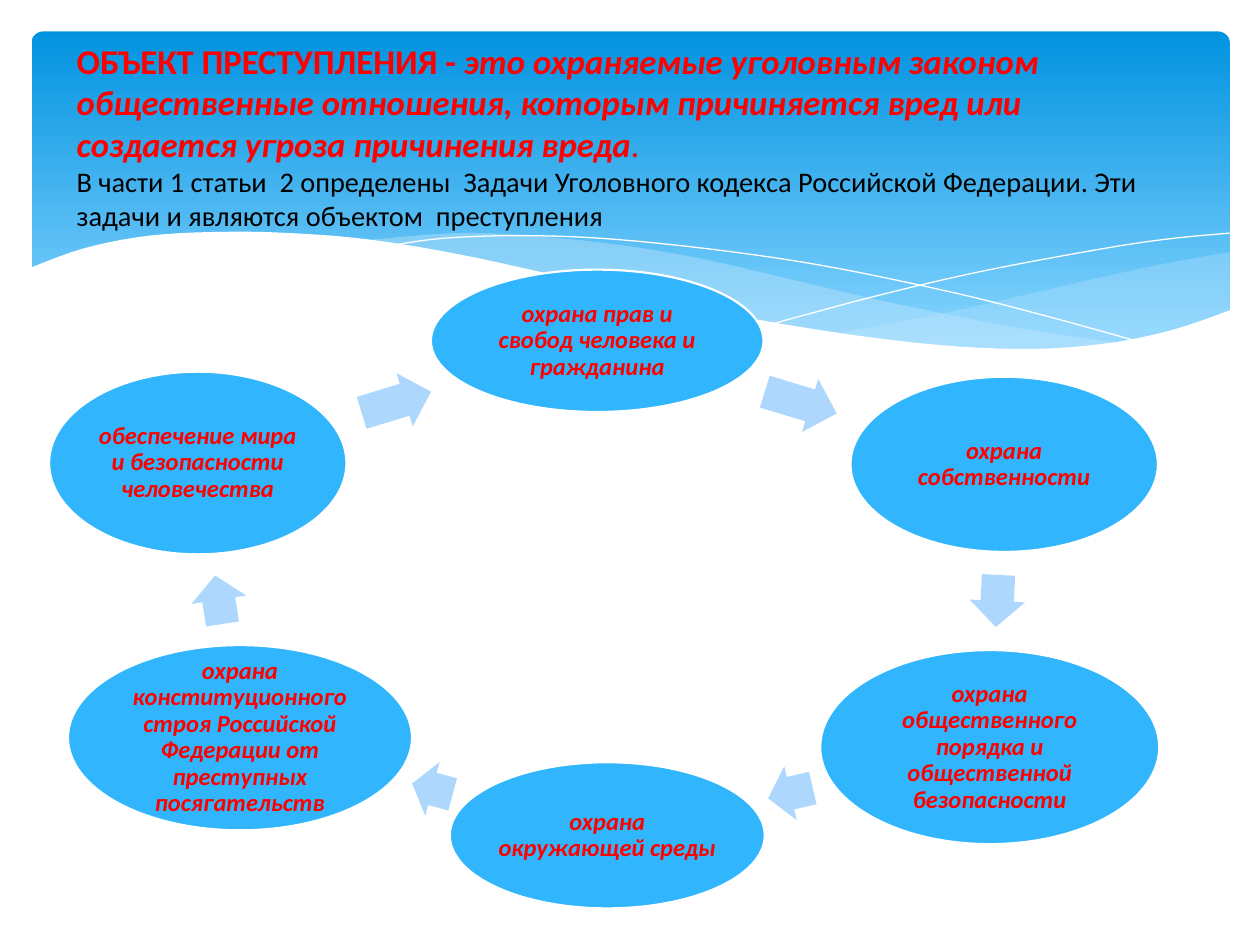
from dataclasses import dataclass
from math import atan2, cos, degrees, hypot, sin

from lxml.etree import SubElement
from pptx import Presentation
from pptx.dml.color import RGBColor
from pptx.enum.shapes import MSO_SHAPE
from pptx.enum.text import MSO_ANCHOR, PP_ALIGN
from pptx.oxml.ns import qn
from pptx.util import Inches, Pt


@dataclass(frozen=True)
class Theme:
    font: str = "Calibri"
    white: str = "FFFFFF"
    black: str = "000000"
    red: str = "FF0000"
    top: str = "0293E0"
    low: str = "83D3FE"
    haze: str = "C6E7FC"
    oval: str = "31B6FD"
    arrow: str = "AED7FE"
    head: float = 19.8
    sub: float = 16.2
    body: float = 14


THEME = Theme()

# Ovals clockwise from the top: left, top, width, height, text
DUTIES = [
    (3.42, 2.14, 2.64, 1.13, "охрана прав и свобод человека и гражданина"),
    (6.75, 2.99, 2.44, 1.39, "охрана собственности"),
    (6.51, 5.16, 2.69, 1.54,
     "охрана общественного порядка и общественной безопасности"),
    (3.57, 6.05, 2.5, 1.16, "охрана окружающей среды"),
    (0.54, 5.12, 2.73, 1.47,
     "охрана конституционного строя Российской Федерации "
     "от преступных посягательств"),
    (0.39, 2.95, 2.36, 1.45, "обеспечение мира и безопасности человечества"),
]


def rgb(code):
    return RGBColor.from_string(code)


def write(para, text, size=THEME.body, color=THEME.red, bold=False, slant=False):
    """Add one formatted run to a paragraph."""
    run = para.add_run()
    run.text = text
    font = run.font
    font.name, font.size = THEME.font, Pt(size)
    font.bold, font.italic = bold, slant
    font.color.rgb = rgb(color)


def paint(shape, fill=None, line=None, width=0, alpha=None):
    """Set fill, opacity in percent and outline; drop the shadow."""
    shape.shadow.inherit = False
    if fill:
        shape.fill.solid()
        shape.fill.fore_color.rgb = rgb(fill)
    else:
        shape.fill.background()
    if alpha:
        color = shape.fill._xPr.find(".//" + qn("a:srgbClr"))
        SubElement(color, qn("a:alpha")).set("val", str(alpha * 1000))
    if line:
        shape.line.color.rgb = rgb(line)
        shape.line.width = Pt(width)
    else:
        shape.line.fill.background()


def preset(slide, kind, box):
    return slide.shapes.add_shape(kind, *map(Inches, box))


def curve(knots, steps=5):
    """Points of a smooth curve that passes through the knots."""
    ends = [knots[0], *knots, knots[-1]]
    points = [knots[0]]
    for a, b, c, d in zip(ends, ends[1:], ends[2:], ends[3:]):
        for step in range(1, steps + 1):
            t = step / steps
            points.append(tuple(
                q + t / 2 * (r - p + t * (2 * p - 5 * q + 4 * r - s
                                          + t * (3 * (q - r) + s - p)))
                for p, q, r, s in zip(a, b, c, d)))
    return points


def wave(slide, points, close=True, **style):
    spots = [(Inches(x), Inches(y)) for x, y in points]
    pen = slide.shapes.build_freeform(*spots[0])
    pen.add_line_segments(spots[1:], close=close)
    paint(pen.convert_to_shape(), **style)


def banner(slide, box):
    """Blue gradient panel with a wavy lower edge."""
    panel = preset(slide, MSO_SHAPE.ROUNDED_RECTANGLE, box)
    panel.adjustments[0] = 0.034
    paint(panel)
    panel.fill.gradient()
    panel.fill.gradient_angle = 270
    for stop, color, place in zip(panel.fill.gradient_stops,
                                  (THEME.top, THEME.low), (0, 0.9)):
        stop.color.rgb = rgb(color)
        stop.position = place

    left, top, width, height = box
    right, low = left + width, top + height

    # Translucent crests
    wave(slide,
         curve([(right, 2), (9.21, 2.1), (8.61, 2.23), (7.79, 2.42),
                (7.06, 2.57), (6.61, 2.65)])
         + curve([(6.61, 2.65), (7.19, 2.72), (7.81, 2.77), (8.35, 2.77),
                  (8.81, 2.73), (9.28, 2.63), (right, 2.47)]),
         fill=THEME.haze, alpha=29)
    wave(slide,
         curve([(8.93, 2.73), (8.07, 2.6), (7.06, 2.4), (6.29, 2.22),
                (5.55, 2.05), (4.89, 1.94), (4.2, 1.87), (3.61, 1.85),
                (2.86, 1.91)])
         + curve([(2.86, 1.91), (3.62, 2.03), (4.49, 2.22), (5.66, 2.48),
                  (6.5, 2.64), (7.22, 2.74), (7.85, 2.78), (8.38, 2.78),
                  (8.93, 2.73)]),
         fill=THEME.haze, alpha=40)

    # Hairlines
    for knots in (
        [(3.09, 1.95), (3.53, 1.89), (4.16, 1.87), (4.89, 1.9), (5.82, 2),
         (6.65, 2.13), (7.6, 2.33), (8.31, 2.51), (9.07, 2.72)],
        [(6.13, 2.57), (6.95, 2.35), (7.76, 2.16), (8.66, 1.99),
         (9.24, 1.9), (right, 1.85)],
    ):
        wave(slide, curve(knots), close=False, line=THEME.white)

    # White wave that hides the foot of the panel
    edge = curve([(right + 0.01, 2.46), (9.3, 2.62), (8.75, 2.73), (8.09, 2.77),
                  (7.26, 2.72), (6.26, 2.58), (5.29, 2.39), (4.47, 2.2),
                  (3.65, 2.02), (2.92, 1.9), (2.3, 1.85), (1.77, 1.84),
                  (1.19, 1.87), (0.67, 1.97), (left - 0.02, 2.13)])
    wave(slide, edge + [(left - 0.02, low + 0.34), (right + 0.01, low + 0.34)],
         fill=THEME.white)


def title(slide, box):
    frame = slide.shapes.add_textbox(*map(Inches, box)).text_frame
    frame.word_wrap = True
    frame.vertical_anchor = MSO_ANCHOR.MIDDLE
    frame.margin_top = frame.margin_bottom = 0
    para = frame.paragraphs[0]
    write(para, "ОБЪЕКТ ПРЕСТУПЛЕНИЯ - ", size=THEME.head, bold=True)
    write(para, "это охраняемые уголовным законом общественные отношения, "
          "которым причиняется вред или создается угроза причинения вреда",
          size=THEME.head, bold=True, slant=True)
    write(para, ".", size=THEME.head)
    write(frame.add_paragraph(),
          "В части 1 статьи  2 определены  Задачи Уголовного кодекса Российской "
          "Федерации. Эти задачи и являются объектом  преступления",
          size=THEME.sub, color=THEME.black)


def oval(slide, box, text):
    shape = preset(slide, MSO_SHAPE.OVAL, box)
    paint(shape, fill=THEME.oval, line=THEME.white, width=1.25)
    frame = shape.text_frame
    frame.word_wrap = True
    frame.vertical_anchor = MSO_ANCHOR.MIDDLE
    frame.margin_left = frame.margin_right = Inches(0.02)
    frame.margin_top = frame.margin_bottom = Inches(0.02)
    para = frame.paragraphs[0]
    para.alignment, para.line_spacing = PP_ALIGN.CENTER, 0.9
    write(para, text, bold=True, slant=True)


def arrow(slide, start, end, thick=0.44, share=0.53):
    """Arrow in the middle of the gap between two ovals."""
    (ax, ay), (bx, by) = [(x + w / 2, y + h / 2) for x, y, w, h in (start, end)]
    turn = atan2(by - ay, bx - ax)
    reach = [0.5 / hypot(cos(turn) / w, sin(turn) / h)
             for _, _, w, h in (start, end)]
    gap = hypot(bx - ax, by - ay) - sum(reach)
    mid, size = reach[0] + gap / 2, gap * share
    x, y = ax + mid * cos(turn), ay + mid * sin(turn)
    shape = preset(slide, MSO_SHAPE.RIGHT_ARROW,
                   (x - size / 2, y - thick / 2, size, thick))
    shape.adjustments[0], shape.adjustments[1] = 0.6, 0.5
    shape.rotation = degrees(turn) % 360
    paint(shape, fill=THEME.arrow)


def cycle(slide, duties):
    """Ring of ovals, each with an arrow to the next."""
    for duty, after in zip(duties, duties[1:] + duties[:1]):
        oval(slide, duty[:4], duty[4])
        arrow(slide, duty[:4], after[:4])


def main():
    deck = Presentation()
    deck.slide_width, deck.slide_height = Inches(10), Inches(7.5)
    slide = deck.slides.add_slide(deck.slide_layouts[6])
    banner(slide, (0.25, 0.25, 9.51, 2.7))
    cycle(slide, DUTIES)
    title(slide, (0.51, 0.33, 9, 1.5))
    deck.save("out.pptx")


if __name__ == "__main__":
    main()
